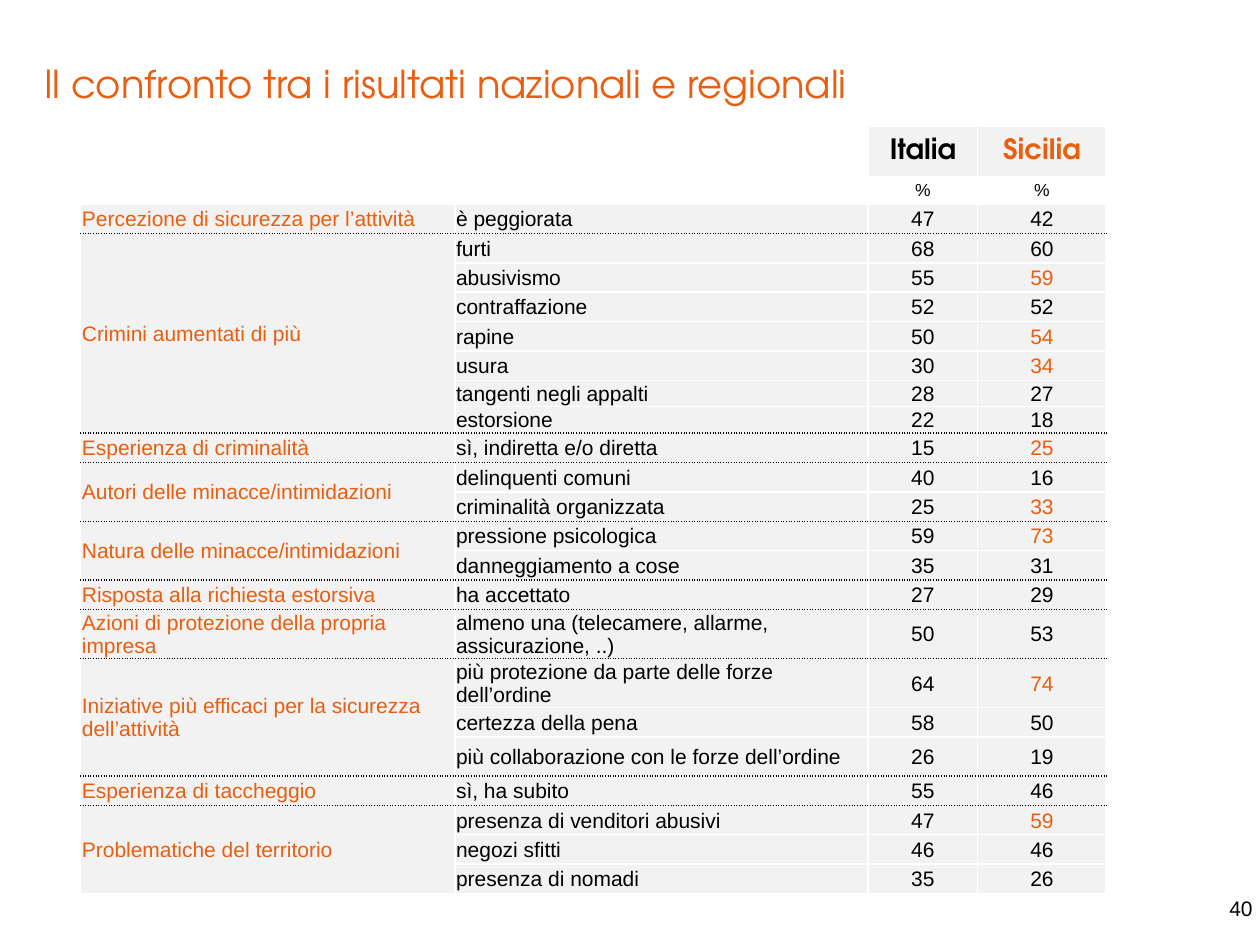
from lxml import etree
from pptx import Presentation
from pptx import util as u
from pptx.dml.color import RGBColor
from pptx.enum import text
from pptx.oxml import ns

ORANGE = RGBColor(0xE9, 0x5E, 0x0F)
BLACK = RGBColor(0, 0, 0)
WHITE = RGBColor(255, 255, 255)
GREY = RGBColor(0xF2, 0xF2, 0xF2)
HEAD, BODY = "TeX Gyre Adventor", "Arial"
LEFT, MID, RIGHT = text.PP_ALIGN.LEFT, text.PP_ALIGN.CENTER, text.PP_ALIGN.RIGHT
LOW = 0.7 / 3
GAP = 4

TITLE = "Il confronto tra i risultati nazionali e regionali"
PAGE = "40"
AREAS = ("Italia", "Sicilia")
WIDTHS = (2.97, 3.28, 0.87, 1.02)
TOPS = (0.4, 0.22)
GROUPS = [
    ("Percezione di sicurezza per l’attività", [("è peggiorata", 47, 42, LOW)]),
    ("Crimini aumentati di più", [
        ("furti", 68, 60, LOW),
        ("abusivismo", 55, 59, LOW),
        ("contraffazione", 52, 52, LOW),
        ("rapine", 50, 54, LOW),
        ("usura", 30, 34, LOW),
        ("tangenti negli appalti", 28, 27, 0.21),
        ("estorsione", 22, 18, 0.21)]),
    ("Esperienza di criminalità", [("sì, indiretta e/o diretta", 15, 25, LOW)]),
    ("Autori delle minacce/intimidazioni", [
        ("delinquenti comuni", 40, 16, LOW),
        ("criminalità organizzata", 25, 33, LOW)]),
    ("Natura delle minacce/intimidazioni", [
        ("pressione psicologica", 59, 73, LOW),
        ("danneggiamento a cose", 35, 31, LOW)]),
    ("Risposta alla richiesta estorsiva", [("ha accettato", 27, 29, LOW)]),
    ("Azioni di protezione della propria impresa", [
        ("almeno una (telecamere, allarme, assicurazione, ..)", 50, 53, 0.39)]),
    ("Iniziative più efficaci per la sicurezza dell’attività", [
        ("più protezione da parte delle forze dell’ordine", 64, 74, 0.39),
        ("certezza della pena", 58, 50, LOW),
        ("più collaborazione con le forze dell’ordine", 26, 19, 0.31)]),
    ("Esperienza di taccheggio", [("sì, ha subito", 55, 46, LOW)]),
    ("Problematiche del territorio", [
        ("presenza di venditori abusivi", 47, 59, LOW),
        ("negozi sfitti", 46, 46, LOW),
        ("presenza di nomadi", 35, 26, LOW)]),
]


def style(frame, words, size, color, align, face=BODY, bold=False):
    frame.text = words
    para = frame.paragraphs[0]
    para.alignment = align
    for run in para.runs:
        font = run.font
        font.name, font.size, font.bold = face, u.Pt(size), bold
        font.color.rgb = color


def border(cell, top=False, bottom=False):
    props = cell._tc.get_or_add_tcPr()
    sides = (("lnL", False), ("lnR", False), ("lnT", top), ("lnB", bottom))
    for place, (side, dots) in enumerate(sides):
        line = etree.Element(ns.qn("a:" + side), w=str(u.Pt(1)))
        fill = etree.SubElement(line, ns.qn("a:solidFill"))
        color = BLACK if dots else WHITE
        etree.SubElement(fill, ns.qn("a:srgbClr"), val=str(color))
        etree.SubElement(line, ns.qn("a:prstDash"), val="sysDot" if dots else "solid")
        props.insert(place, line)


def put(cell, words, size=12, color=BLACK, align=MID, face=BODY, bold=False, fill=GREY):
    cell.margin_left = cell.margin_right = cell.margin_top = u.Inches(0.01)
    cell.margin_bottom = 0
    cell.vertical_anchor = text.MSO_ANCHOR.MIDDLE
    if fill is None:
        cell.fill.background()
    else:
        cell.fill.solid()
        cell.fill.fore_color.rgb = fill
    style(cell.text_frame, words, size, color, align, face, bold)
    if not words:
        para = cell.text_frame.paragraphs[0]._p
        etree.SubElement(para, ns.qn("a:endParaRPr"), sz=str(size * 100))


def fill_head(grid):
    for col, (name, color) in enumerate(zip(AREAS, (BLACK, ORANGE)), 2):
        put(grid.cell(0, col), name, 16, color, face=HEAD, bold=True)
        put(grid.cell(1, col), "%", 10, fill=None)
    for row in range(2):
        for col in range(2):
            put(grid.cell(row, col), "", 10, fill=None)
        for col in range(4):
            border(grid.cell(row, col))


def fill_body(grid):
    row = 2
    for theme, items in GROUPS:
        first, last = row, row + len(items) - 1
        for label, italy, sicily, _ in items:
            tint = ORANGE if sicily - italy >= GAP else BLACK
            put(grid.cell(row, 0), theme if row == first else "", 12, ORANGE, LEFT)
            put(grid.cell(row, 1), label, align=LEFT)
            put(grid.cell(row, 2), str(italy))
            put(grid.cell(row, 3), str(sicily), color=tint)
            for col in range(4):
                border(grid.cell(row, col),
                       top=row > 2 and (row == first or col == 0),
                       bottom=theme != GROUPS[-1][0] and (row == last or col == 0))
            row += 1
        if last > first:
            grid.cell(first, 0).merge(grid.cell(last, 0))


def main():
    deck = Presentation()
    deck.slide_width, deck.slide_height = u.Inches(10), u.Inches(7.5)
    slide = deck.slides.add_slide(deck.slide_layouts[5])

    title = slide.shapes.title
    title.left, title.top = u.Inches(0.35), u.Inches(0.13)
    title.width, title.height = u.Inches(8.35), u.Inches(0.71)
    frame = title.text_frame
    frame.margin_left = frame.margin_right = frame.margin_top = frame.margin_bottom = 0
    frame.vertical_anchor = text.MSO_ANCHOR.BOTTOM
    style(frame, TITLE, 22, ORANGE, LEFT, HEAD)

    highs = list(TOPS) + [item[3] for _, items in GROUPS for item in items]
    grid = slide.shapes.add_table(
        len(highs), len(WIDTHS), u.Inches(0.64), u.Inches(1),
        u.Inches(sum(WIDTHS)), u.Inches(sum(highs))).table
    grid.first_row = grid.horz_banding = False
    for col, width in zip(grid.columns, WIDTHS):
        col.width = u.Inches(width)
    for row, high in zip(grid.rows, highs):
        row.height = u.Inches(high)
    fill_head(grid)
    fill_body(grid)

    page = slide.shapes.add_textbox(
        u.Inches(6.82), u.Inches(6.82), u.Inches(3.22), u.Inches(0.54)).text_frame
    page.word_wrap = True
    page.vertical_anchor = text.MSO_ANCHOR.BOTTOM
    style(page, PAGE, 12, BLACK, RIGHT)

    deck.save("out.pptx")


if __name__ == "__main__":
    main()
